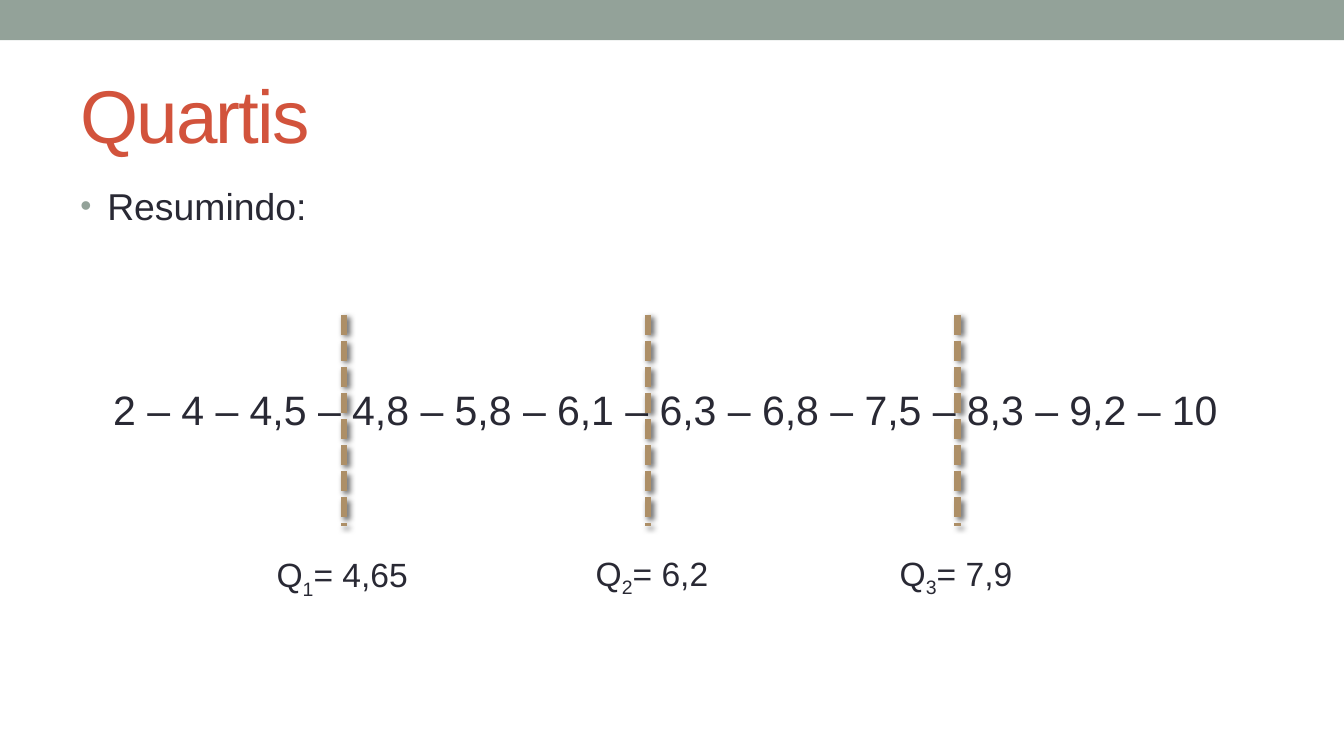
from dataclasses import dataclass

from lxml import etree
from pptx import Presentation
from pptx.dml.color import RGBColor
from pptx.enum.dml import MSO_LINE
from pptx.enum.shapes import MSO_CONNECTOR, MSO_SHAPE
from pptx.enum.text import MSO_ANCHOR, PP_ALIGN
from pptx.oxml import parse_xml
from pptx.oxml.ns import nsdecls, qn
from pptx.slide import Slide
from pptx.text.text import _Paragraph
from pptx.util import Emu, Inches, Pt

SAGE = RGBColor(0x93, 0xA2, 0x99)
RED = RGBColor(0xD2, 0x53, 0x3C)
INK = RGBColor(0x29, 0x29, 0x34)
TAN = RGBColor(0xAD, 0x8F, 0x67)

RECTANGLE = MSO_SHAPE.RECTANGLE
STRAIGHT = MSO_CONNECTOR.STRAIGHT
DASH = MSO_LINE.SQUARE_DOT
SYSTEM_DASH = "sysDash"
MIDDLE, TOP = MSO_ANCHOR.MIDDLE, MSO_ANCHOR.TOP
LEFT, CENTER = PP_ALIGN.LEFT, PP_ALIGN.CENTER

FONT = "Arial"
WIDTH = Inches(10)
HEIGHT = Emu(WIDTH * 9 // 16)
DIVIDER_TOP, DIVIDER_BOTTOM = 41.67, 69.55
LABEL_HEIGHT = 7.11
VALUES = ("2", "4", "4,5", "4,8", "5,8", "6,1", "6,3", "6,8", "7,5", "8,3", "9,2", "10")
SHADOW = (
    f'<a:effectLst {nsdecls("a")}><a:outerShdw blurRad="{Pt(3)}" dist="{Pt(2)}" '
    'dir="2700000" algn="tl" rotWithShape="0"><a:srgbClr val="000000">'
    '<a:alpha val="60000"/></a:srgbClr></a:outerShdw></a:effectLst>'
)


@dataclass(frozen=True)
class Area:
    """A rectangle in percent of the slide's width and height."""

    left: float
    top: float
    width: float
    height: float

    def lengths(self) -> tuple[Emu, Emu, Emu, Emu]:
        """Return left, top, width and height as lengths."""
        return across(self.left), down(self.top), across(self.width), down(self.height)


@dataclass(frozen=True)
class Quartile:
    """A quartile with its divider and its label."""

    number: int
    value: str
    divider: float
    label: Area


QUARTILES = (
    Quartile(1, "4,65", 25.6, Area(19.6, 72.44, 12, LABEL_HEIGHT)),
    Quartile(2, "6,2", 48.22, Area(43.34, 72.27, 10.6, LABEL_HEIGHT)),
    Quartile(3, "7,9", 71.26, Area(65.96, 72.27, 10.6, LABEL_HEIGHT)),
)


def across(percent: float) -> Emu:
    """Return a share of the slide's width."""
    return Emu(round(WIDTH * percent / 100))


def down(percent: float) -> Emu:
    """Return a share of the slide's height."""
    return Emu(round(HEIGHT * percent / 100))


def add_band(page: Slide) -> None:
    """Draw the band along the top edge."""
    band = page.shapes.add_shape(RECTANGLE, *Area(0, 0, 100, 5.33).lengths())
    band.shadow.inherit = False
    band.fill.solid()
    band.fill.fore_color.rgb = SAGE
    band.line.fill.background()


def add_text(
    page: Slide,
    area: Area,
    texts: tuple[str, ...],
    size: float,
    color: RGBColor = INK,
    align: PP_ALIGN = LEFT,
    anchor: MSO_ANCHOR = TOP,
    wrap: bool = True,
    right_margin: float = 0.1,
) -> _Paragraph:
    """Add a text box with one paragraph of the given runs."""
    frame = page.shapes.add_textbox(*area.lengths()).text_frame
    frame.word_wrap = wrap
    frame.vertical_anchor = anchor
    frame.margin_right = Inches(right_margin)
    para = frame.paragraphs[0]
    para.alignment = align
    para.font.name = FONT
    para.font.size = Pt(size)
    para.font.color.rgb = color
    for text in texts:
        para.add_run().text = text
    return para


def add_bullet(para: _Paragraph) -> None:
    """Give a paragraph a hanging sage bullet."""
    para.space_before = Pt(4)
    properties = para._p.get_or_add_pPr()
    properties.set("marL", str(Inches(0.2)))
    properties.set("indent", str(-Inches(0.2)))
    color = etree.Element(qn("a:buClr"))
    etree.SubElement(color, qn("a:srgbClr"), val=str(SAGE))
    size = etree.Element(qn("a:buSzPct"), val="85000")
    font = etree.Element(qn("a:buFont"), typeface=FONT)
    mark = etree.Element(qn("a:buChar"), char="•")
    defaults = properties.find(qn("a:defRPr"))
    for part in (color, size, font, mark):
        defaults.addprevious(part)


def add_quartile(page: Slide, quartile: Quartile) -> None:
    """Draw a dashed divider and the quartile's label."""
    x = across(quartile.divider)
    divider = page.shapes.add_connector(
        STRAIGHT, x, down(DIVIDER_TOP), x, down(DIVIDER_BOTTOM)
    )
    divider.line.color.rgb = TAN
    divider.line.width = Pt(3.5)
    divider.line.dash_style = DASH
    properties = divider._element.spPr
    properties.find(".//" + qn("a:prstDash")).set("val", SYSTEM_DASH)
    properties.append(parse_xml(SHADOW))

    texts = ("Q", str(quartile.number), f"= {quartile.value}")
    para = add_text(page, quartile.label, texts, 18, wrap=False)
    para.runs[1]._r.get_or_add_rPr().set("baseline", "-25000")


def main() -> None:
    """Build the quartile slide and save it."""
    deck = Presentation()
    deck.slide_width, deck.slide_height = WIDTH, HEIGHT
    page = deck.slides.add_slide(deck.slide_layouts[6])

    add_band(page)
    add_bullet(add_text(page, Area(5, 23.33, 90, 9.96), ("Resumindo:",), 20))
    title = add_text(
        page, Area(5, 7.82, 90, 14.4), ("Quartis",), 40, color=RED, anchor=MIDDLE
    )
    title.runs[0]._r.get_or_add_rPr().set("spc", "-100")
    add_text(
        page,
        Area(6.7, 50, 87.4, 8.36),
        (" – ".join(VALUES),),
        22,
        align=CENTER,
        right_margin=0.27,
    )
    for quartile in QUARTILES:
        add_quartile(page, quartile)

    deck.save("out.pptx")


if __name__ == "__main__":
    main()
